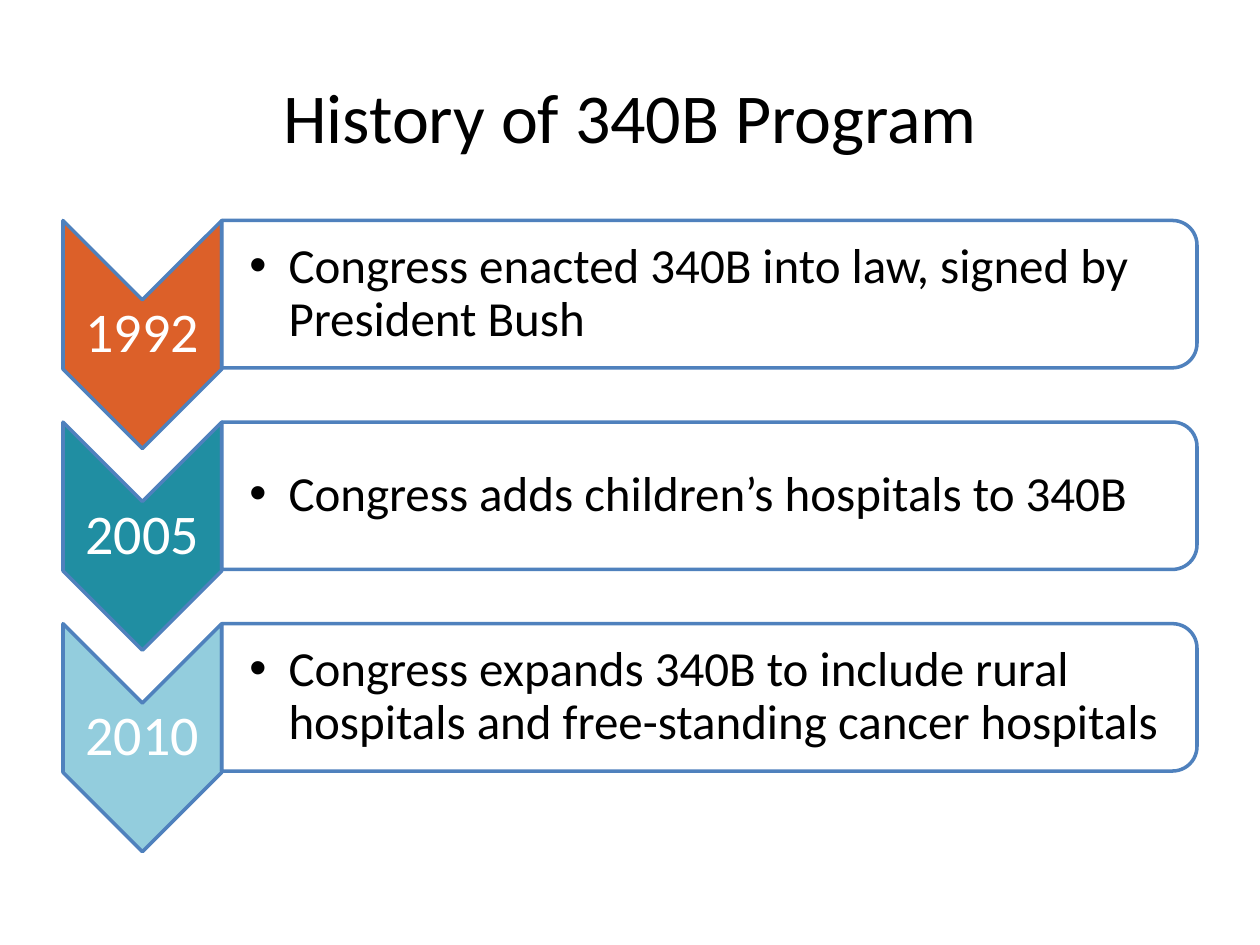
from dataclasses import dataclass

from lxml import etree
from pptx import Presentation
from pptx.dml.color import RGBColor
from pptx.enum.shapes import MSO_SHAPE
from pptx.enum.text import MSO_ANCHOR, PP_ALIGN
from pptx.oxml.ns import qn
from pptx.util import Inches, Pt

CHEVRON, PANEL = MSO_SHAPE.CHEVRON, MSO_SHAPE.ROUND_2_SAME_RECTANGLE
MIDDLE = MSO_ANCHOR.MIDDLE
LEFT, CENTER = PP_ALIGN.LEFT, PP_ALIGN.CENTER


@dataclass(frozen=True)
class Theme:
    font: str = "Calibri"
    title_size: int = 40
    year_size: int = 32
    event_size: int = 28
    ink: str = "000000"
    paper: str = "FFFFFF"
    outline: str = "4F81BD"
    outline_width: int = 2


THEME = Theme()

# Slide size and timeline grid, in inches
SLIDE_WIDTH, SLIDE_HEIGHT = 10, 7.5
MARGIN = SLIDE_WIDTH * 0.05
FIRST_ROW, ROW_PITCH = 1.75, 1.6
YEAR_WIDTH, YEAR_HEIGHT = 1.26, 1.81
EVENT_LEFT = MARGIN + YEAR_WIDTH
EVENT_WIDTH, EVENT_HEIGHT = 7.74, 1.17
TEXT_INSET = 0.02

MILESTONES = [
    ("1992", "DC6029", "Congress enacted 340B into law, signed by President Bush"),
    ("2005", "208EA2", "Congress adds children’s hospitals to 340B"),
    ("2010", "93CDDD", "Congress expands 340B to include rural hospitals "
                       "and free-standing cancer hospitals"),
]


def add_turned_shape(slide, kind, left, top, width, height, fill, opacity=100):
    """Add a shape turned by 90 degrees that covers the given area."""
    shift = (width - height) / 2
    shape = slide.shapes.add_shape(
        kind, Inches(left + shift), Inches(top - shift), Inches(height), Inches(width))
    shape.rotation = 90
    shape.shadow.inherit = False
    shape.fill.solid()
    shape.fill.fore_color.rgb = RGBColor.from_string(fill)
    if opacity < 100:
        color = shape.fill._xPr.find(".//" + qn("a:srgbClr"))
        etree.SubElement(color, qn("a:alpha"), val=str(opacity * 1000))
    shape.line.color.rgb = RGBColor.from_string(THEME.outline)
    shape.line.width = Pt(THEME.outline_width)
    return shape


def add_text(slide, text, left, top, width, height, size, color,
             align=CENTER, inset=TEXT_INSET, left_inset=TEXT_INSET, spacing=0.9):
    """Add a one-paragraph text box and return its paragraph."""
    box = slide.shapes.add_textbox(
        Inches(left), Inches(top), Inches(width), Inches(height))
    frame = box.text_frame
    frame.word_wrap = True
    frame.vertical_anchor = MIDDLE
    frame.margin_top = frame.margin_right = frame.margin_bottom = Inches(inset)
    frame.margin_left = Inches(left_inset)
    frame.text = text
    para = frame.paragraphs[0]
    para.alignment = align
    para.line_spacing = spacing
    font = para.runs[0].font
    font.name, font.size = THEME.font, Pt(size)
    font.color.rgb = RGBColor.from_string(color)
    return para


def add_bullet(para, indent):
    """Give a paragraph a round bullet with a hanging indent."""
    para.level = 1
    properties = para._p.get_or_add_pPr()
    properties.set("marL", str(Inches(indent)))
    properties.set("indent", str(-Inches(indent)))
    etree.SubElement(properties, qn("a:buFont"), typeface="Arial")
    etree.SubElement(properties, qn("a:buChar"), char="•")


def add_milestone(slide, row, year, color, event):
    """Add one timeline row: a year arrow and its event panel."""
    top = FIRST_ROW + row * ROW_PITCH

    # Year arrow, with its label between the notch and the point
    add_turned_shape(slide, CHEVRON, MARGIN, top, YEAR_WIDTH, YEAR_HEIGHT, color)
    notch = YEAR_WIDTH / 2
    add_text(slide, year, MARGIN, top + notch, YEAR_WIDTH, YEAR_HEIGHT - 2 * notch,
             THEME.year_size, THEME.paper)

    # Event panel and text
    area = (EVENT_LEFT, top, EVENT_WIDTH, EVENT_HEIGHT)
    add_turned_shape(slide, PANEL, *area, THEME.paper, opacity=90)
    left, top, width, height = area
    para = add_text(slide, event, left, top + 0.06, width - 0.06, height - 0.12,
                    THEME.event_size, THEME.ink, align=LEFT, left_inset=0.22)
    add_bullet(para, 0.31)


def main():
    deck = Presentation()
    deck.slide_width, deck.slide_height = Inches(SLIDE_WIDTH), Inches(SLIDE_HEIGHT)
    slide = deck.slides.add_slide(deck.slide_layouts[6])

    # Title
    add_text(slide, "History of 340B Program", MARGIN, 0.33,
             SLIDE_WIDTH - 2 * MARGIN, 1.17, THEME.title_size, THEME.ink,
             inset=0.05, left_inset=0.05, spacing=1.0)

    # Timeline
    for row, milestone in enumerate(MILESTONES):
        add_milestone(slide, row, *milestone)

    deck.save("out.pptx")


if __name__ == "__main__":
    main()
